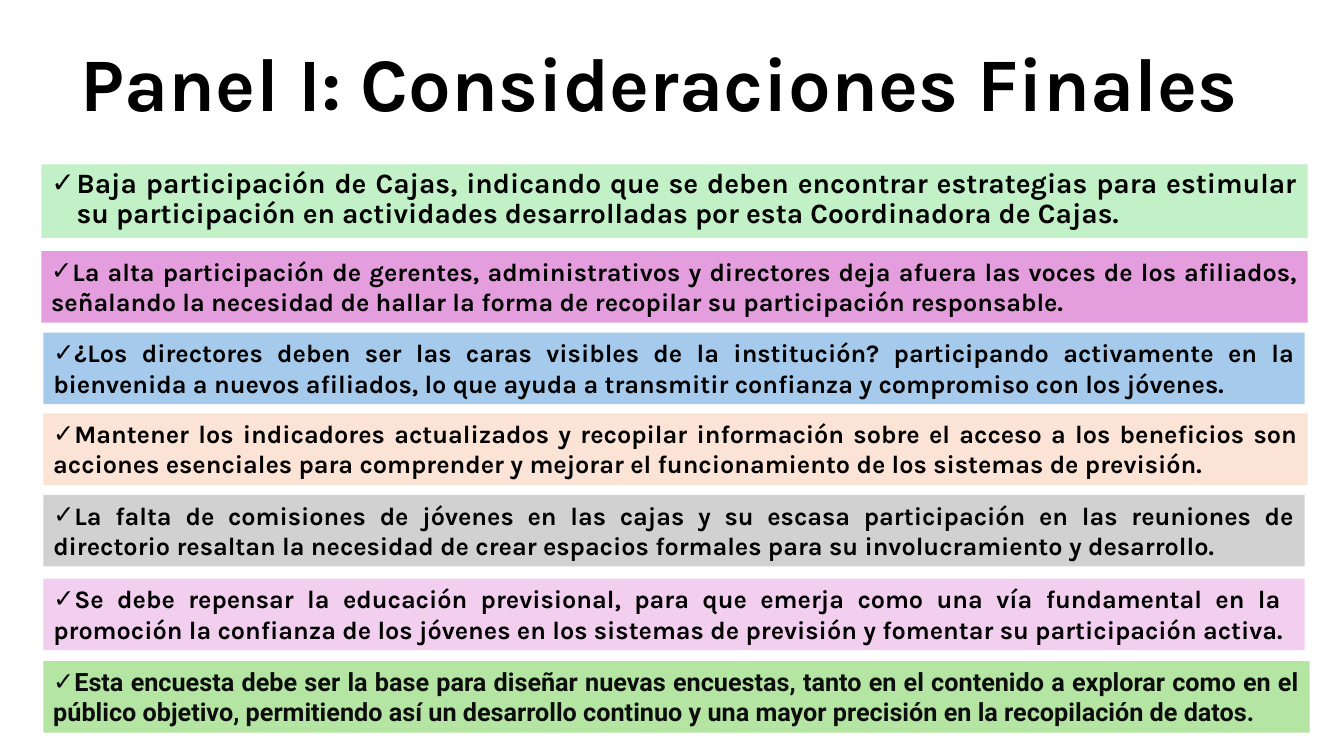
import pptx
import pptx.util
import pptx.dml.color
import pptx.enum.shapes
import pptx.enum.text
import pptx.oxml.ns
from dataclasses import dataclass
from lxml import etree

Inches = pptx.util.Inches
Pt = pptx.util.Pt
Align = pptx.enum.text.PP_ALIGN


@dataclass(frozen=True)
class Theme:
    font: str = "Karla"
    closing_font: str = "Roboto"
    ink: str = "000000"
    closing_ink: str = "0D0D0D"
    background: str = "FFFFFF"
    mint: str = "C2F1C8"
    orchid: str = "E59EDD"
    blue: str = "A6CAEC"
    peach: str = "FBE3D6"
    gray: str = "D1D1D1"
    pink: str = "F2CFEE"
    green: str = "B4E5A2"
    title_size: int = 54
    lead_size: int = 20
    point_size: int = 18


THEME = Theme()
BAND_HEIGHT = 0.71

LEAD = ("Baja participación de Cajas, indicando que se deben encontrar estrategias para "
        "estimular su participación en actividades desarrolladas por esta Coordinadora de Cajas.")

# left, top, width, fill, text
POINTS = [
    (0.41, 2.49, 12.56, THEME.orchid,
     "La alta participación de gerentes, administrativos y directores deja afuera las voces de "
     "los afiliados, señalando la necesidad de hallar la forma de recopilar su participación "
     "responsable."),
    (0.43, 3.3, 12.51, THEME.blue,
     "¿Los directores deben ser las caras visibles de la institución? participando activamente "
     "en la bienvenida a nuevos afiliados, lo que ayuda a transmitir confianza y compromiso con "
     "los jóvenes."),
    (0.43, 4.1, 12.54, THEME.peach,
     "Mantener los indicadores actualizados y recopilar información sobre el acceso a los "
     "beneficios son acciones esenciales para comprender y mejorar el funcionamiento de los "
     "sistemas de previsión."),
    (0.43, 4.91, 12.51, THEME.gray,
     "La falta de comisiones de jóvenes en las cajas y su escasa participación en las reuniones "
     "de directorio resaltan la necesidad de crear espacios formales para su involucramiento y "
     "desarrollo."),
    (0.43, 5.74, 12.51, THEME.pink,
     "Se debe repensar la educación previsional, para que emerja como una vía fundamental en la  "
     "promoción la confianza de los jóvenes en los sistemas de previsión y fomentar su "
     "participación activa."),
]

CLOSING = (0.43, 6.56, 12.56, THEME.green,
           "Esta encuesta debe ser la base para diseñar nuevas encuestas, tanto en el contenido a "
           "explorar como en el público objetivo, permitiendo así un desarrollo continuo y una "
           "mayor precisión en la recopilación de datos.")


def rgb(value):
    return pptx.dml.color.RGBColor.from_string(value)


class SlideBuilder:
    def __init__(self, slide, theme):
        self.slide = slide
        self.theme = theme
        slide.background.fill.solid()
        slide.background.fill.fore_color.rgb = rgb(theme.background)

    def place(self, shape, left, top, width, height):
        shape.left, shape.top = Inches(left), Inches(top)
        shape.width, shape.height = Inches(width), Inches(height)

    def set_text(self, shape, text, size, alignment, anchor, font=None, color=None):
        frame = shape.text_frame
        frame.text = text
        frame.word_wrap = True
        frame.auto_size = pptx.enum.text.MSO_AUTO_SIZE.NONE
        frame.vertical_anchor = anchor
        paragraph = frame.paragraphs[0]
        paragraph.alignment = alignment
        run_font = paragraph.runs[0].font
        run_font.name = font or self.theme.font
        run_font.size = Pt(size)
        run_font.bold = True
        run_font.color.rgb = rgb(color or self.theme.ink)
        return paragraph

    def fill(self, shape, color):
        shape.fill.solid()
        shape.fill.fore_color.rgb = rgb(color)

    def check_mark(self, paragraph, indent=0):
        """Give the paragraph a check bullet with a hanging indent in inches."""
        properties = paragraph._p.get_or_add_pPr()
        properties.set("marL", str(Inches(indent)))
        properties.set("indent", str(Inches(-indent)))
        qn = pptx.oxml.ns.qn
        etree.SubElement(properties, qn("a:buFont"), typeface="Arial")
        etree.SubElement(properties, qn("a:buChar"), char="✓")

    def title(self, text):
        shape = self.slide.shapes.title
        self.place(shape, 0.43, 0.25, 12.22, 1.23)
        paragraph = self.set_text(shape, text, self.theme.title_size, Align.CENTER,
                                  pptx.enum.text.MSO_ANCHOR.MIDDLE)
        paragraph.line_spacing = 0.9

    def lead_point(self, text):
        shape = self.slide.placeholders[1]
        self.place(shape, 0.41, 1.63, 12.56, 0.73)
        self.fill(shape, self.theme.mint)
        paragraph = self.set_text(shape, text, self.theme.lead_size, Align.JUSTIFY,
                                  pptx.enum.text.MSO_ANCHOR.TOP)
        paragraph.line_spacing = 0.9
        paragraph.space_before = Pt(10)
        self.check_mark(paragraph, 0.25)

    def point(self, left, top, width, color, text, font=None, ink=None):
        shape = self.slide.shapes.add_shape(
            pptx.enum.shapes.MSO_SHAPE.RECTANGLE,
            Inches(left), Inches(top), Inches(width), Inches(BAND_HEIGHT))
        shape.shadow.inherit = False
        shape.line.fill.background()
        self.fill(shape, color)
        paragraph = self.set_text(shape, text, self.theme.point_size, Align.JUSTIFY,
                                  pptx.enum.text.MSO_ANCHOR.TOP, font, ink)
        self.check_mark(paragraph)


def main():
    presentation = pptx.Presentation()
    presentation.slide_width = Inches(13.33)
    presentation.slide_height = Inches(7.5)
    slide = presentation.slides.add_slide(presentation.slide_layouts[1])
    builder = SlideBuilder(slide, THEME)
    builder.title("Panel I: Consideraciones Finales")
    builder.lead_point(LEAD)
    for point in POINTS:
        builder.point(*point)
    builder.point(*CLOSING, font=THEME.closing_font, ink=THEME.closing_ink)
    presentation.save("out.pptx")


if __name__ == "__main__":
    main()
